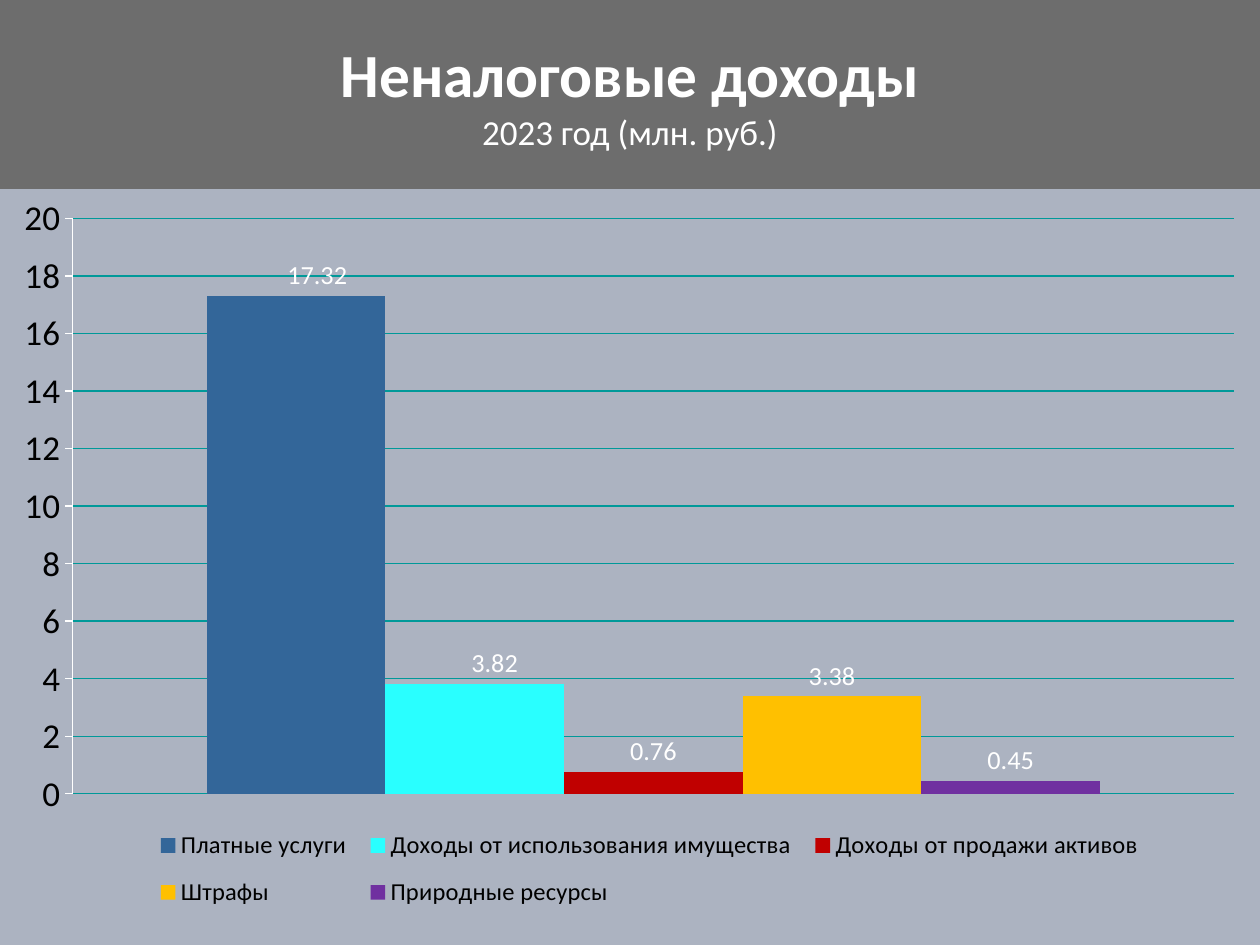
from dataclasses import dataclass
from typing import Any

from lxml.etree import SubElement
from pptx import Presentation
from pptx.chart.data import CategoryChartData
from pptx.dml.color import RGBColor
from pptx.enum.chart import XL_CHART_TYPE as Kind
from pptx.enum.chart import XL_LABEL_POSITION as Spot
from pptx.enum.chart import XL_LEGEND_POSITION as Side
from pptx.enum.chart import XL_TICK_MARK as Tick
from pptx.enum.text import MSO_ANCHOR as Anchor
from pptx.enum.text import MSO_AUTO_SIZE as Fit
from pptx.enum.text import PP_ALIGN as Align
from pptx.oxml.ns import qn
from pptx.util import Emu, Pt

SCALE = 914400 / 126


@dataclass(frozen=True)
class Theme:
    back: str = "ACB3C1"
    band: str = "6D6D6D"
    light: str = "FFFFFF"
    dark: str = "000000"
    grid: str = "009999"
    face: str = "Calibri"
    base: str = "Cabin"
    head: int = 35
    sub: int = 20
    body: int = 18
    label: int = 15
    key: int = 14


@dataclass(frozen=True)
class Bar:
    name: str
    value: float
    color: str
    shift: tuple[float, float] | None = None


THEME = Theme()
BARS = [
    Bar("Платные услуги", 17.32, "336699", (0.017, 0)),
    Bar("Доходы от использования имущества", 3.82, "29FFFF", (0.016, 0)),
    Bar("Доходы от продажи активов", 0.76, "C00000"),
    Bar("Штрафы", 3.38, "FFC000"),
    Bar("Природные ресурсы", 0.45, "7030A0"),
]


def px(count: int) -> Emu:
    return Emu(round(count * SCALE))


def put(item: Any, values: dict[str, Any]) -> None:
    for key, value in values.items():
        setattr(item, key, value)


def style(font: Any, size: int, color: str, face: str = THEME.face, bold: bool = False) -> None:
    put(font, {"size": Pt(size), "name": face, "bold": bold})
    font.color.rgb = RGBColor.from_string(color)


def paint(fill: Any, color: str) -> None:
    fill.solid()
    fill.fore_color.rgb = RGBColor.from_string(color)


def stroke(line: Any, color: str) -> None:
    paint(line.fill, color)
    line.width = Pt(0.75)


def place(node: Any, index: int, values: dict[str, Any]) -> None:
    for old in node.findall(qn("c:layout")):
        node.remove(old)
    layout = SubElement(node, qn("c:layout"))
    manual = SubElement(layout, qn("c:manualLayout"))
    for key, value in values.items():
        SubElement(manual, qn(f"c:{key}")).set("val", str(value))
    node.insert(index, layout)


def frame(x: float, y: float, w: float, h: float) -> dict[str, Any]:
    return {"xMode": "edge", "yMode": "edge", "x": x, "y": y, "w": w, "h": h}


def draw_head(slide: Any) -> None:
    title = slide.shapes.title
    put(title, {"left": px(0), "top": px(0), "width": px(1260), "height": px(189)})
    paint(title.fill, THEME.band)
    text = title.text_frame
    text.text = "Неналоговые доходы\n2023 год (млн. руб.)"
    put(text, {"word_wrap": True, "auto_size": Fit.NONE, "vertical_anchor": Anchor.MIDDLE})
    for line, size, bold in zip(text.paragraphs, (THEME.head, THEME.sub), (True, False)):
        line.alignment = Align.CENTER
        style(line.runs[0].font, size, THEME.light, bold=bold)


def draw_bar(series: Any, bar: Bar) -> None:
    paint(series.format.fill, bar.color)
    series.invert_if_negative = False
    labels = series.data_labels
    put(labels, {"show_value": True, "number_format": "0.00",
                 "number_format_is_linked": False, "position": Spot.OUTSIDE_END})
    style(labels.font, THEME.label, THEME.light)
    if bar.shift:
        label = series.points[0].data_label
        style(label.font, THEME.label, THEME.light)
        label.position = Spot.OUTSIDE_END
        node = labels._element.find(qn("c:dLbl"))
        place(node, 1, dict(zip("xy", bar.shift)))


def draw_chart(slide: Any) -> None:
    data = CategoryChartData(number_format="0.00")
    data.categories = ["1"]
    for bar in BARS:
        data.add_series(bar.name, [bar.value])
    box = map(px, (8, 197, 1246, 742))
    chart = slide.shapes.add_chart(Kind.COLUMN_CLUSTERED, *box, data).chart
    put(chart, {"has_title": False, "has_legend": True})
    style(chart.font, THEME.body, THEME.light, THEME.base)
    plot = chart.plots[0]
    put(plot, {"gap_width": 150, "overlap": 0, "vary_by_categories": False})
    for series, bar in zip(plot.series, BARS):
        draw_bar(series, bar)

    chart.category_axis.visible = False
    axis = chart.value_axis
    put(axis, {"minimum_scale": 0, "maximum_scale": 20, "major_unit": 2,
               "major_tick_mark": Tick.OUTSIDE, "has_major_gridlines": True})
    put(axis.tick_labels, {"number_format": "0", "number_format_is_linked": False})
    style(axis.tick_labels.font, THEME.sub, THEME.dark)
    stroke(axis.format.line, THEME.light)
    stroke(axis.major_gridlines.format.line, THEME.grid)

    legend = chart.legend
    put(legend, {"position": Side.BOTTOM, "include_in_layout": False})
    style(legend.font, THEME.key, THEME.dark)
    root = chart.element
    place(root.find(f".//{qn('c:legend')}"), 1, frame(0.11, 0.83, 0.81, 0.15))
    area = {"layoutTarget": "inner", **frame(0.052, 0.022, 0.932, 0.781)}
    place(root.find(f".//{qn('c:plotArea')}"), 0, area)


def main() -> None:
    deck = Presentation()
    put(deck, {"slide_width": px(1260), "slide_height": px(945)})
    slide = deck.slides.add_slide(deck.slide_layouts[5])
    paint(slide.background.fill, THEME.back)
    draw_head(slide)
    draw_chart(slide)
    deck.save("out.pptx")


if __name__ == "__main__":
    main()
